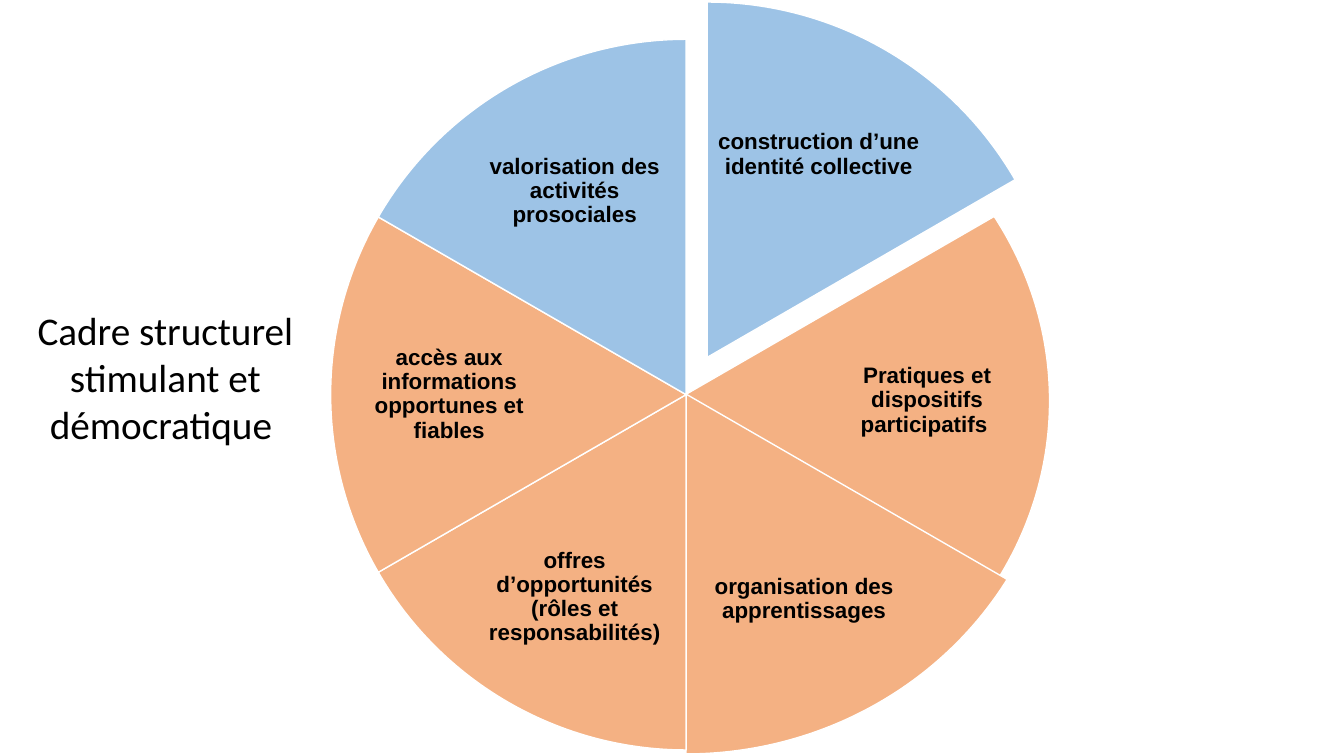
"""Build a slide showing a six-part wheel with one slice pulled out."""
from dataclasses import dataclass

from pptx import Presentation
from pptx.dml.color import RGBColor
from pptx.enum.shapes import MSO_SHAPE as Shape
from pptx.enum.text import MSO_ANCHOR as Anchor, PP_ALIGN as Align
from pptx.util import Inches, Pt


@dataclass(frozen=True)
class Theme:
    blue: str = "9DC3E6"
    orange: str = "F4B183"
    outline: str = "FFFFFF"
    ink: str = "000000"
    label_font: str = "Arial"
    label_size: int = 16
    title_font: str = "Calibri"
    title_size: int = 28


THEME = Theme()
WHEEL = (3.28, 0.39, 7.05, 7.05)
TITLE = ("Cadre structurel stimulant et démocratique ", (0.2, 2.99, 2.88, 1.51))
SLICES = [
    ("construction d’une identité collective", THEME.blue,
     (3.49, 0.02, 7.05, 7.05), (7.09, 0.78, 2.06, 1.51)),
    ("Pratiques et dispositifs participatifs ", THEME.orange,
     (2.98, 0.48, 7.43, 6.99), (8.07, 3.27, 2.25, 1.41)),
    ("organisation des apprentissages", THEME.orange,
     (3.09, 0.34, 7.43, 7.14), (6.89, 5.18, 2.17, 1.53)),
    ("offres d’opportunités (rôles et responsabilités)", THEME.orange,
     WHEEL, (4.67, 5.17, 2.06, 1.51)),
    ("accès aux informations opportunes et fiables", THEME.orange,
     WHEEL, (3.39, 3.2, 2.13, 1.43)),
    ("valorisation des activités prosociales", THEME.blue,
     WHEEL, (4.67, 1.14, 2.06, 1.51)),
]
FIRST_ANGLE = 270
SLICE_ANGLE = 360 / len(SLICES)
ANGLE_UNIT = 0.6
LABEL_INSET = 0.02


def inches(bounds):
    """Turn a tuple of numbers into lengths."""
    return [Inches(value) for value in bounds]


def add_text(shapes, text, bounds, font_name, size, bold=False):
    """Add a centred, wrapping text box and return it."""
    box = shapes.add_textbox(*inches(bounds))
    box.text_frame.word_wrap = True
    para = box.text_frame.paragraphs[0]
    para.text = text
    para.alignment = Align.CENTER
    para.font.name = font_name
    para.font.size = Pt(size)
    para.font.bold = bold
    para.font.color.rgb = RGBColor.from_string(THEME.ink)
    return box


def add_slice(shapes, index, color, bounds):
    """Add one pie slice at its place around the wheel."""
    pie = shapes.add_shape(Shape.PIE, *inches(bounds))
    start = FIRST_ANGLE + index * SLICE_ANGLE
    for side in range(2):
        pie.adjustments[side] = (start + side * SLICE_ANGLE) % 360 * ANGLE_UNIT
    pie.shadow.inherit = False
    pie.fill.solid()
    pie.fill.fore_color.rgb = RGBColor.from_string(color)
    pie.line.color.rgb = RGBColor.from_string(THEME.outline)
    pie.line.width = Pt(1)


def add_label(shapes, text, bounds):
    """Add the bold label of a slice."""
    box = add_text(shapes, text, bounds, THEME.label_font, THEME.label_size, bold=True)
    frame = box.text_frame
    frame.vertical_anchor = Anchor.MIDDLE
    frame.margin_left = frame.margin_right = Inches(LABEL_INSET)
    frame.margin_top = frame.margin_bottom = Inches(LABEL_INSET)
    frame.paragraphs[0].line_spacing = 0.9


def main():
    """Assemble and save the deck."""
    deck = Presentation()
    deck.slide_width, deck.slide_height = Inches(13.33), Inches(7.5)
    page = deck.slides.add_slide(deck.slide_layouts[6])
    wheel = page.shapes.add_group_shape()
    for index, (text, color, pie_bounds, label_bounds) in enumerate(SLICES):
        add_slice(wheel.shapes, index, color, pie_bounds)
        add_label(wheel.shapes, text, label_bounds)
    add_text(page.shapes, *TITLE, THEME.title_font, THEME.title_size)
    deck.save("out.pptx")


if __name__ == "__main__":
    main()
